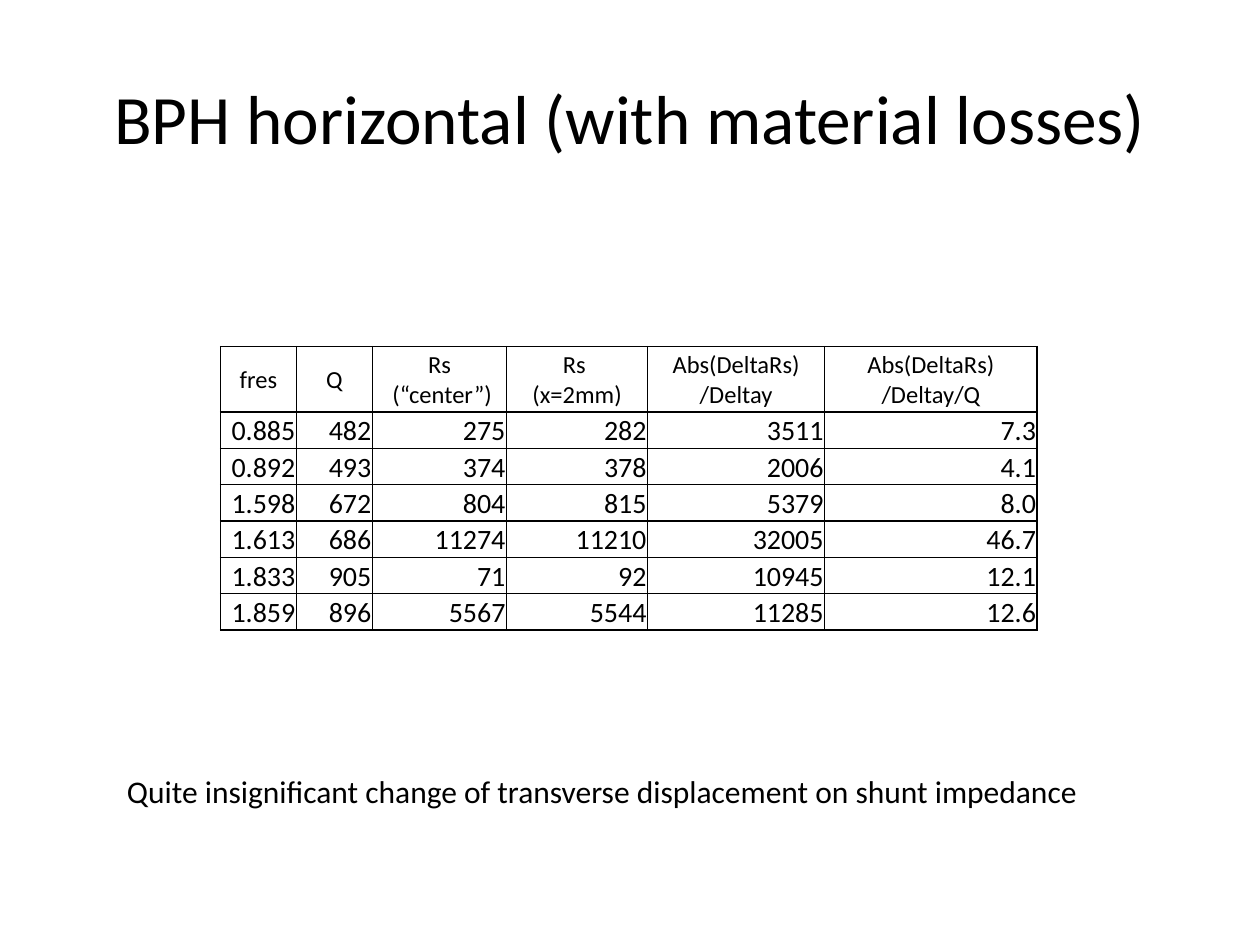
from pptx import Presentation
from pptx.dml.color import RGBColor
from pptx.enum.text import MSO_ANCHOR, MSO_AUTO_SIZE, PP_ALIGN
from pptx.oxml import parse_xml
from pptx.oxml.ns import nsdecls
from pptx.util import Pt

TITLE = "BPH horizontal (with material losses)"
NOTE = "Quite insignificant change of transverse displacement on shunt impedance"
ROWS = [
    ("fres", "Q", "Rs\v (“center”)", "Rs \v(x=2mm)", "Abs(DeltaRs)\v/Deltay", "Abs(DeltaRs)\v/Deltay/Q"),
    ("0.885", "482", "275", "282", "3511", "7.3"),
    ("0.892", "493", "374", "378", "2006", "4.1"),
    ("1.598", "672", "804", "815", "5379", "8.0"),
    ("1.613", "686", "11274", "11210", "32005", "46.7"),
    ("1.833", "905", "71", "92", "10945", "12.1"),
    ("1.859", "896", "5567", "5544", "11285", "12.6"),
]
COL_WIDTHS = [43.4, 43.4, 76.7, 80.6, 101.2, 121.4]
ROW_HEIGHTS = [37.4] + [20.8] * 6
INK, PAPER = "000000", "FFFFFF"
HEAD = {"size": 14, "align": PP_ALIGN.CENTER}
BODY = {"size": 16, "align": PP_ALIGN.RIGHT}
MARGINS = {"margin_left": 0.7, "margin_right": 0.7, "margin_top": 0.7, "margin_bottom": 0}


def color(value):
    """Turn a hex string into a colour."""
    return RGBColor.from_string(value)


def write(tf, text, size, align):
    """Put one formatted paragraph into a text frame."""
    p = tf.paragraphs[0]
    p.text = text
    p.alignment = align
    for r in p.runs:
        for name, value in {"name": "Calibri", "size": Pt(size)}.items():
            setattr(r.font, name, value)
        r.font.color.rgb = color(INK)


def add_borders(cell):
    """Draw a thin line on all four sides of a cell."""
    props = cell._tc.get_or_add_tcPr()
    for i, side in enumerate(("lnL", "lnR", "lnT", "lnB")):
        props.insert(i, parse_xml(
            f'<a:{side} {nsdecls("a")} w="{Pt(1)}"><a:solidFill>'
            f'<a:srgbClr val="{INK}"/></a:solidFill></a:{side}>'))


def add_data_table(s):
    """Add the table of resonances."""
    table = s.shapes.add_table(
        len(ROWS), len(COL_WIDTHS), Pt(126), Pt(198),
        Pt(sum(COL_WIDTHS)), Pt(sum(ROW_HEIGHTS))).table
    for column, width in zip(table.columns, COL_WIDTHS):
        column.width = Pt(width)
    for i, (values, height) in enumerate(zip(ROWS, ROW_HEIGHTS)):
        table.rows[i].height = Pt(height)
        for j, value in enumerate(values):
            cell = table.cell(i, j)
            for name, margin in MARGINS.items():
                setattr(cell, name, Pt(margin))
            cell.vertical_anchor = MSO_ANCHOR.BOTTOM if i else MSO_ANCHOR.MIDDLE
            cell.fill.solid()
            cell.fill.fore_color.rgb = color(PAPER)
            write(cell.text_frame, value, **(BODY if i else HEAD))
            add_borders(cell)


def main():
    """Build the slide and save it."""
    prs = Presentation()
    prs.slide_width, prs.slide_height = Pt(720), Pt(540)
    s = prs.slides.add_slide(prs.slide_layouts[5])

    title = s.shapes.title
    box = {"left": 36, "top": 21.6, "width": 648, "height": 90}
    for name, value in box.items():
        setattr(title, name, Pt(value))
    title.text_frame.vertical_anchor = MSO_ANCHOR.MIDDLE
    write(title.text_frame, TITLE, 39.6, PP_ALIGN.CENTER)

    add_data_table(s)

    tf = s.shapes.add_textbox(Pt(65.5), Pt(437.8), Pt(564.5), Pt(28.8)).text_frame
    tf.word_wrap = False
    tf.auto_size = MSO_AUTO_SIZE.SHAPE_TO_FIT_TEXT
    write(tf, NOTE, 18, PP_ALIGN.LEFT)

    prs.save("out.pptx")


if __name__ == "__main__":
    main()
